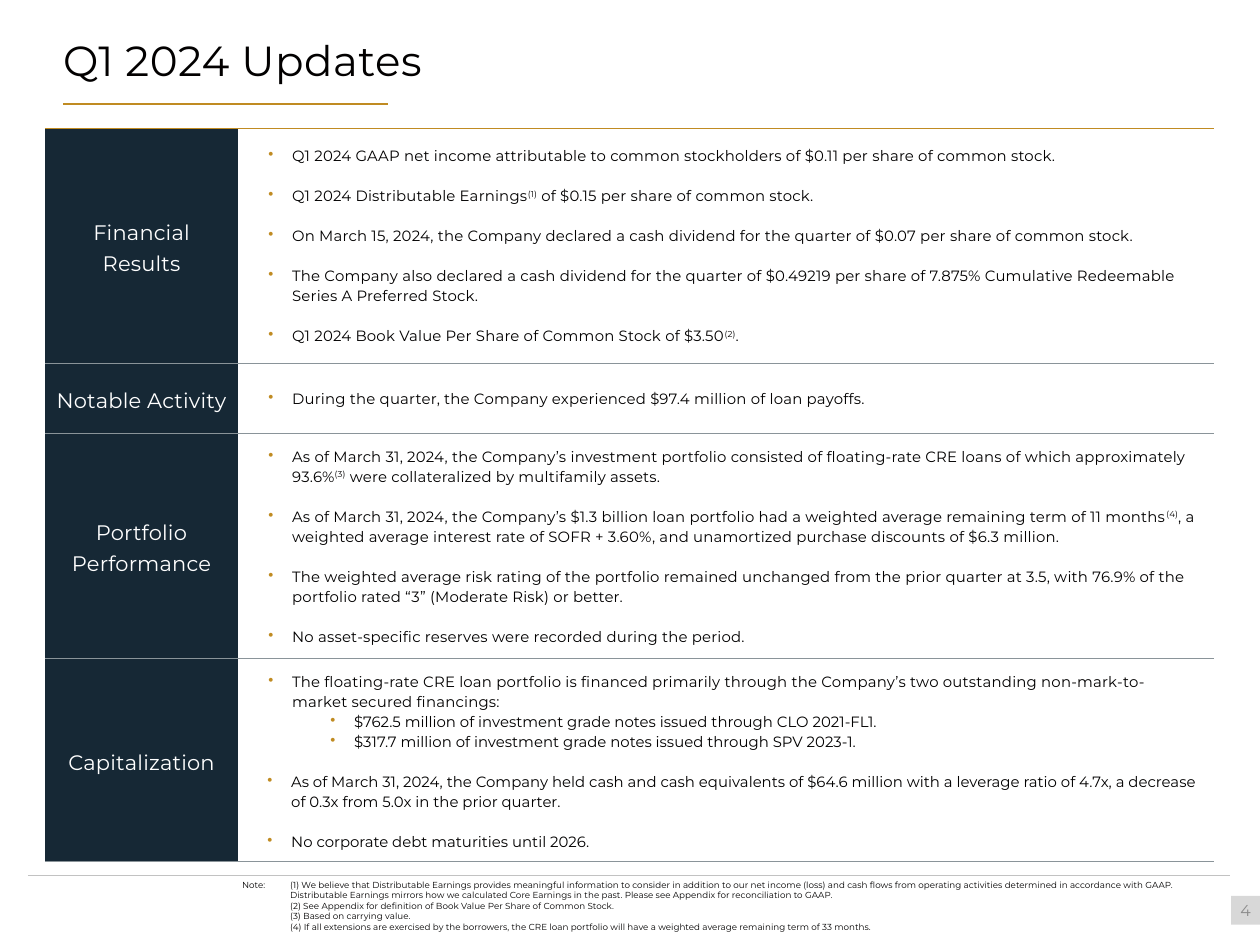
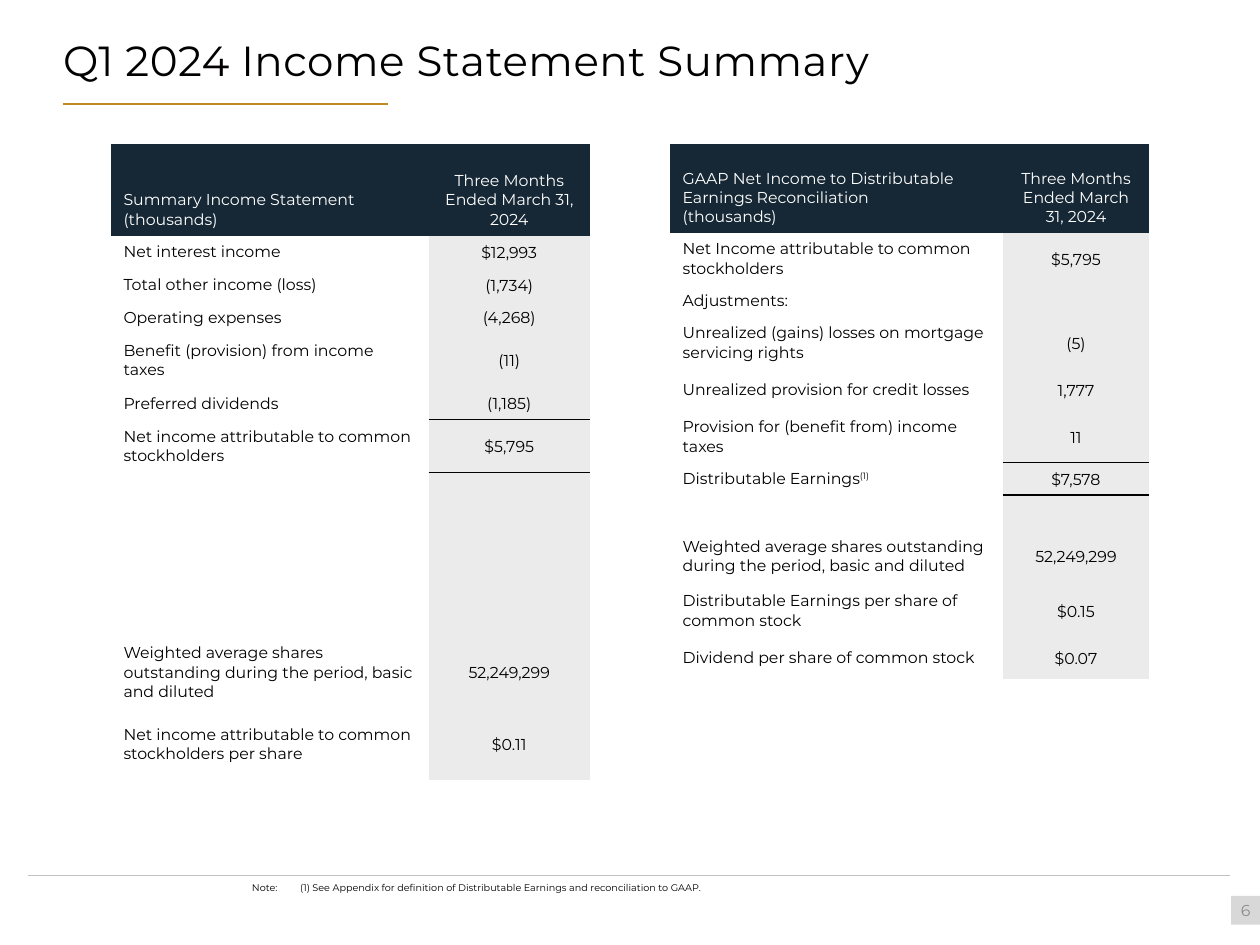
"""Builds the Q1 2024 updates and income statement slides."""
from lxml.etree import SubElement
from pptx import Presentation
from pptx.dml.color import RGBColor
from pptx.enum.shapes import MSO_CONNECTOR, MSO_SHAPE
from pptx.enum.text import MSO_ANCHOR, MSO_AUTO_SIZE, PP_ALIGN
from pptx.oxml.ns import qn
from pptx.util import Cm, Pt

NAVY, GOLD, BLACK, WHITE = "162835", "C08B22", "020000", "FFFFFF"
PALE, RULE, ROW_RULE = "EBEBEB", "C2C2C2", "8A9499"
BADGE, BADGE_TEXT = "D8D8D8", "8C8C8C"
FONT = "Montserrat"
NO_GRID = "{2D5ABB26-0587-4C30-8999-92F81FD0307C}"
PERIOD = "Three Months Ended March 31, 2024"

# kind: left indent in cm, letter spacing, space before in points
BULLETS = {"main": (0.99, 10, 11.4), "sub": (2.24, 0, 0), "close": (0.97, 0, 11.4)}

UPDATES = [
    ("Financial\nResults", 4.74, [
        ("main", "Q1 2024 GAAP net income attributable to common stockholders of $0.11 per share of common stock."),
        ("main", "Q1 2024 Distributable Earnings^(1)^ of $0.15 per share of common stock."),
        ("main", "On March 15, 2024, the Company declared a cash dividend for the quarter of $0.07 per share of "
                 "common stock."),
        ("main", "The Company also declared a cash dividend for the quarter of $0.49219 per share of 7.875% "
                 "Cumulative Redeemable Series A Preferred Stock."),
        ("main", "Q1 2024 Book Value Per Share of Common Stock of $3.50^(2)^."),
    ]),
    ("Notable Activity", 1.41, [
        ("main", "During the quarter, the Company experienced $97.4 million of loan payoffs."),
    ]),
    ("Portfolio Performance", 4.55, [
        ("main", "As of March 31, 2024, the Company’s investment portfolio consisted of floating-rate CRE loans "
                 "of which approximately 93.6%^(3)^ were collateralized by multifamily assets."),
        ("main", "As of March 31, 2024, the Company’s $1.3 billion loan portfolio had a weighted average "
                 "remaining term of 11 months^(4)^, a weighted average interest rate of SOFR + 3.60%, and "
                 "unamortized purchase discounts of $6.3 million."),
        ("main", "The weighted average risk rating of the portfolio remained unchanged from the prior quarter "
                 "at 3.5, with 76.9% of the portfolio rated “3” (Moderate Risk) or better."),
        ("main", "No asset-specific reserves were recorded during the period."),
    ]),
    ("Capitalization", 4.06, [
        ("main", "The floating-rate CRE loan portfolio is financed primarily through the Company’s two "
                 "outstanding non-mark-to-market secured financings:"),
        ("sub", "$762.5 million of investment grade notes issued through CLO 2021-FL1."),
        ("sub", "$317.7 million of investment grade notes issued through SPV 2023-1."),
        ("close", "As of March 31, 2024, the Company held cash and cash equivalents of $64.6 million with a "
                  "leverage ratio of 4.7x, a decrease of 0.3x from 5.0x in the prior quarter."),
        ("close", "No corporate debt maturities until 2026."),
    ]),
]
UPDATE_NOTES = [
    "(1) We believe that Distributable Earnings provides meaningful information to consider in addition to our "
    "net income (loss) and cash flows from operating activities determined in accordance with GAAP. "
    "Distributable Earnings mirrors how we calculated Core Earnings in the past. Please see Appendix for "
    "reconciliation to GAAP.",
    "(2) See Appendix for definition of Book Value Per Share of Common Stock.",
    "(3) Based on carrying value.",
    "(4) If all extensions are exercised by the borrowers, the CRE loan portfolio will have a weighted average "
    "remaining term of 33 months.",
]
INCOME_NOTES = ["(1) See Appendix for definition of Distributable Earnings and reconciliation to GAAP."]

SHARES = "Weighted average shares outstanding during the period, basic and diluted"
INCOME = [
    ("Summary Income Statement\n(thousands)", PERIOD, 1.85),
    ("Net interest income", "$12,993", 0.66),
    ("Total other income (loss)", "(1,734)", 0.66),
    ("Operating expenses", "(4,268)", 0.66),
    ("Benefit (provision) from income taxes", "(11)", 1.07),
    ("Preferred dividends", "(1,185)", 0.66),
    ("Net income attributable to common stockholders", "$5,795", 1.07),
    *[("", "", 0.66)] * 5,
    (SHARES, "52,249,299", 1.45),
    ("Net income attributable to common stockholders per share", "$0.11", 1.45),
]
RECONCILIATION = [
    ("GAAP Net Income to Distributable Earnings Reconciliation\n(thousands)", PERIOD, 1.8),
    ("Net Income attributable to common stockholders", "$5,795", 1.03),
    ("Adjustments:", "", 0.64),
    ("Unrealized (gains) losses on mortgage servicing rights", "(5)", 1.03),
    ("Unrealized provision for credit losses", "1,777", 0.86),
    ("Provision for (benefit from) income taxes", "11", 1.03),
    ("Distributable Earnings^(1)^", "$7,578", 0.64),
    ("", "", 0.64),
    (SHARES, "52,249,299", 1.17),
    ("Distributable Earnings per share of common stock", "$0.15", 1.03),
    ("Dividend per share of common stock", "$0.07", 0.86),
]


def rgb(value):
    """Turn a hex string into a colour."""
    return RGBColor.from_string(value)


def apply(target, fmt):
    """Set each attribute named in a dict of format values."""
    for name, value in fmt.items():
        setattr(target, name, value)


def box(anchor, left=0, top=0, right=0, bottom=0):
    """Give the anchor and the margins in cm as format values."""
    return {"vertical_anchor": anchor, "margin_left": Cm(left), "margin_top": Cm(top),
            "margin_right": Cm(right), "margin_bottom": Cm(bottom)}


def write(p, text, size, color=BLACK, spacing=0, **fmt):
    """Fill a paragraph, raising the parts between carets."""
    apply(p, fmt)
    if not text:
        SubElement(p._p, qn("a:endParaRPr"), sz=str(int(size * 100)))
    for i, part in enumerate(text.split("^") if text else []):
        r = p.add_run()
        r.text = part
        apply(r.font, {"name": FONT, "size": Pt(size)})
        r.font.color.rgb = rgb(color)
        rPr = r._r.get_or_add_rPr()
        rPr.set("spc", str(spacing))
        if i % 2:
            rPr.set("baseline", "30000")


def paragraphs(tf, count):
    """Return the first paragraph of a frame and as many new ones as needed."""
    return [tf.paragraphs[0]] + [tf.add_paragraph() for _ in range(count - 1)]


def write_lines(tf, text, size, color=BLACK, spacing=0, **fmt):
    """Write each line of a text as a paragraph."""
    lines = text.split("\n")
    for p, line in zip(paragraphs(tf, len(lines)), lines):
        write(p, line, size, color, spacing, **fmt)


def set_indent(p, left, first=0):
    """Set the left and first-line indents in cm and return the properties."""
    pPr = p._p.get_or_add_pPr()
    pPr.set("marL", str(Cm(left)))
    pPr.set("indent", str(Cm(first)))
    return pPr


def write_bullets(tf, bullets):
    """Write a bulleted list with gold bullets."""
    for i, (p, (kind, text)) in enumerate(zip(paragraphs(tf, len(bullets)), bullets)):
        left, spacing, before = BULLETS[kind]
        pPr = set_indent(p, left, -0.48)
        SubElement(SubElement(pPr, qn("a:buClr")), qn("a:srgbClr"), val=GOLD)
        SubElement(pPr, qn("a:buChar"), char="•")
        write(p, text, 8.5, spacing=spacing, line_spacing=1.1, space_before=Pt(before if i else 0))


def add_line(s, x1, x2, y, color, width):
    """Add a horizontal line."""
    line = s.shapes.add_connector(MSO_CONNECTOR.STRAIGHT, Cm(x1), Cm(y), Cm(x2), Cm(y))
    line.line.color.rgb = rgb(color)
    line.line.width = Pt(width)
    SubElement(line._element.spPr, qn("a:effectLst"))


def add_page(prs, title, number, title_width):
    """Add a slide with its title, rules and page number."""
    s = prs.slides.add_slide(prs.slide_layouts[5])
    add_line(s, 0.56, 24.79, 17.65, RULE, 0.5)
    add_line(s, 1.27, 7.82, 2.1, GOLD, 1.5)
    sp = s.shapes.title
    apply(sp, {"left": Cm(1.27), "top": Cm(0.53), "width": Cm(title_width), "height": Cm(2.16)})
    apply(sp.text_frame, {**box(MSO_ANCHOR.TOP, 0, 0.13, 0.25, 0.13),
                          "auto_size": MSO_AUTO_SIZE.NONE, "word_wrap": True})
    write(sp.text_frame.paragraphs[0], title, 24, spacing=30, alignment=PP_ALIGN.LEFT, line_spacing=Pt(30))
    badge = s.shapes.add_shape(MSO_SHAPE.RECTANGLE, Cm(24.82), Cm(18.06), Cm(0.58), Cm(0.58))
    badge.shadow.inherit = False
    badge.fill.solid()
    badge.fill.fore_color.rgb = rgb(BADGE)
    badge.line.fill.background()
    apply(badge.text_frame, box(MSO_ANCHOR.MIDDLE))
    write(badge.text_frame.paragraphs[0], str(number), 9, BADGE_TEXT, alignment=PP_ALIGN.CENTER)
    return s


def add_notes(s, notes, left, top, size):
    """Add footnotes with a hanging label before the first."""
    sp = s.shapes.add_textbox(Cm(left), Cm(top), Cm(19.5), Cm(0.27 * len(notes)))
    tf = sp.text_frame
    apply(tf, {**box(MSO_ANCHOR.TOP), "word_wrap": True})
    for i, (p, note) in enumerate(zip(paragraphs(tf, len(notes)), notes)):
        pPr = set_indent(p, 0.97, 0 if i else -0.97)
        if i == 0:
            SubElement(SubElement(pPr, qn("a:tabLst")), qn("a:tab"), pos=str(Cm(0.97)), algn="l")
        write(p, note if i else "Note:\t" + note, size)


def add_grid(s, left, top, widths, heights):
    """Add a plain table with the given column widths and row heights in cm."""
    frame = s.shapes.add_table(len(heights), len(widths), Cm(left), Cm(top), Cm(sum(widths)), Cm(sum(heights)))
    table = frame.table
    apply(table, {"first_row": False, "horz_banding": False})
    table._tbl.tblPr.find(qn("a:tableStyleId")).text = NO_GRID
    for column, width in zip(table.columns, widths):
        column.width = Cm(width)
    for row, height in zip(table.rows, heights):
        row.height = Cm(height)
    return table


def set_cell(cell, fmt, fill=None, borders=()):
    """Set the layout, borders and fill of a cell."""
    apply(cell, fmt)
    for side, color, width in borders:
        ln = SubElement(cell._tc.get_or_add_tcPr(), qn("a:ln" + side), w=str(Pt(width)))
        SubElement(SubElement(ln, qn("a:solidFill")), qn("a:srgbClr"), val=color)
    if fill:
        cell.fill.solid()
        cell.fill.fore_color.rgb = rgb(fill)
    else:
        cell.fill.background()


def add_updates(s):
    """Add the table of updates by topic."""
    table = add_grid(s, 0.91, 2.58, (3.89, 19.68), [height for _, height, _ in UPDATES])
    for i, (topic, _, bullets) in enumerate(UPDATES):
        label, body = table.cell(i, 0), table.cell(i, 1)
        borders = [("T", ROW_RULE if i else GOLD, 0.5), ("B", ROW_RULE, 0.5)]
        set_cell(label, box(MSO_ANCHOR.MIDDLE), NAVY, borders)
        write_lines(label.text_frame, topic, 12, WHITE, 10, alignment=PP_ALIGN.CENTER, line_spacing=1.2)
        set_cell(body, box(MSO_ANCHOR.MIDDLE, 0.1, 0.25, 0.3, 0.25), None, borders)
        write_bullets(body.text_frame, bullets)


def add_statement(s, left, widths, rows, total):
    """Add a statement table with a rule above its total row."""
    table = add_grid(s, left, 2.9, widths, [height for _, _, height in rows])
    rules = {total - 1: [("B", BLACK, 1)], total: [("T", BLACK, 1)]}
    for i, (label, value, _) in enumerate(rows):
        head = i == 0
        anchor = MSO_ANCHOR.BOTTOM if head else MSO_ANCHOR.MIDDLE
        roomy = box(anchor, 0.25, 0.13, 0.25, 0.13)
        color = WHITE if head else BLACK
        name, amount = table.cell(i, 0), table.cell(i, 1)
        set_cell(name, roomy, NAVY if head else None)
        write_lines(name.text_frame, label, 9, color)
        set_cell(amount, roomy if head else box(anchor, 0.03, 0.03, 0.03),
                 NAVY if head else PALE, rules.get(i, ()))
        write_lines(amount.text_frame, value, 9, color, alignment=PP_ALIGN.CENTER)


def main():
    """Build both slides and save them."""
    prs = Presentation()
    apply(prs, {"slide_width": Cm(25.4), "slide_height": Cm(19.05)})
    s = add_page(prs, "Q1 2024 Updates", 4, 20.96)
    add_notes(s, UPDATE_NOTES, 4.88, 17.73, 5)
    add_updates(s)
    s = add_page(prs, "Q1 2024 Income Statement Summary", 6, 24.1)
    add_statement(s, 2.24, (6.4, 3.25), INCOME, 6)
    add_statement(s, 13.51, (6.7, 2.96), RECONCILIATION, 6)
    add_notes(s, INCOME_NOTES, 5.08, 17.78, 5.5)
    prs.save("out.pptx")


if __name__ == "__main__":
    main()
